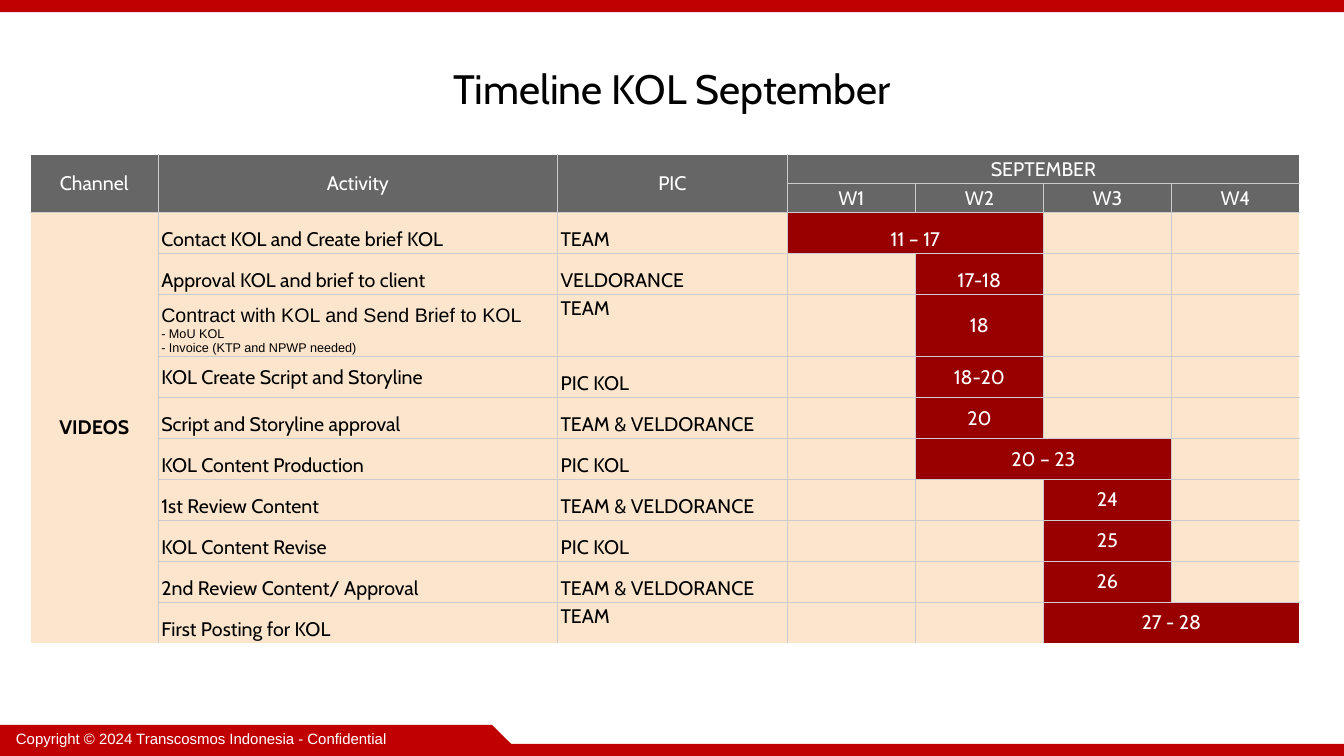
from lxml import etree
from pptx import Presentation
from pptx import util as u
from pptx.dml.color import RGBColor
from pptx.enum import shapes, text
from pptx.oxml.ns import qn

RED = RGBColor(0xC0, 0x00, 0x00)
DARK = RGBColor(0x98, 0x00, 0x00)
GREY = RGBColor(0x66, 0x66, 0x66)
LINE = RGBColor(0xCC, 0xCC, 0xCC)
CREAM = RGBColor(0xFC, 0xE5, 0xCD)
WHITE = RGBColor(0xFF, 0xFF, 0xFF)
BLACK = RGBColor(0x00, 0x00, 0x00)

LEFT, MID = text.PP_ALIGN.LEFT, text.PP_ALIGN.CENTER
TOP, HALF, LOW = (text.MSO_ANCHOR.TOP, text.MSO_ANCHOR.MIDDLE,
                  text.MSO_ANCHOR.BOTTOM)

deck = Presentation()
deck.slide_width, deck.slide_height = u.Inches(13.33), u.Inches(7.5)
slide = deck.slides.add_slide(deck.slide_layouts[6])


def style(para, size, color, align=LEFT, face="Cabin", bold=False):
    para.alignment = align
    font = para.font
    font.size, font.name, font.bold = u.Pt(size), face, bold
    font.color.rgb = color


def put(row, col, words, color, align=LEFT, anchor=LOW, bold=False):
    """Write words into one table cell."""
    cell = table.cell(row, col)
    cell.text = words
    cell.vertical_anchor = anchor
    for para in cell.text_frame.paragraphs:
        style(para, 14, color, align, bold=bold)


# Red bars and footer tab
KIND = shapes.MSO_SHAPE
BAR = 0.12
for kind, top, wide, high in [
    (KIND.RECTANGLE, 7.5 - BAR, 13.33, BAR),
    (KIND.SNIP_1_RECTANGLE, 7.19, 5.07, 0.38),
    (KIND.RECTANGLE, 0, 13.33, BAR),
]:
    bar = slide.shapes.add_shape(
        kind, 0, u.Inches(top), u.Inches(wide), u.Inches(high))
    bar.shadow.inherit = False
    bar.fill.solid()
    bar.fill.fore_color.rgb = RED
    bar.line.fill.background()
    if kind == KIND.SNIP_1_RECTANGLE:
        bar.adjustments[0] = 0.5

# Title and copyright line
for words, place, size, color, align, face in [
    ("Timeline KOL September", (1.74, 0.61, 9.85, 0.51),
     29.3, BLACK, MID, "Cabin"),
    ("Copyright © 2024 Transcosmos Indonesia - Confidential",
     (0.06, 7.19, 4.01, 0.28), 10.7, WHITE, LEFT, "Arial"),
]:
    frame = slide.shapes.add_textbox(*map(u.Inches, place)).text_frame
    frame.word_wrap = True
    frame.text = words
    style(frame.paragraphs[0], size, color, align, face)
    if align == MID:
        frame.margin_left = frame.margin_right = frame.margin_bottom = 0
        frame.margin_top = u.Inches(0.02)

# Each task: activity, its anchor, person, anchor, first week, weeks, dates, anchor
TEAM, BOTH, KOL = "TEAM", "TEAM & VELDORANCE", "PIC KOL"
CONTRACT = ("Contract with KOL and Send Brief to KOL\n"
            "- MoU KOL\n- Invoice (KTP and NPWP needed)")
tasks = [
    ("Contact KOL and Create brief KOL", LOW, TEAM, LOW, 1, 2, "11 – 17", LOW),
    ("Approval KOL and brief to client", LOW, "VELDORANCE", LOW,
     2, 1, "17-18", LOW),
    (CONTRACT, LOW, TEAM, TOP, 2, 1, "18", HALF),
    ("KOL Create Script and Storyline", HALF, KOL, LOW, 2, 1, "18-20", HALF),
    ("Script and Storyline approval", LOW, BOTH, LOW, 2, 1, "20", HALF),
    ("KOL Content Production", LOW, KOL, LOW, 2, 2, "20 – 23", HALF),
    ("1st Review Content", LOW, BOTH, LOW, 3, 1, "24", HALF),
    ("KOL Content Revise", LOW, KOL, LOW, 3, 1, "25", HALF),
    ("2nd Review Content/ Approval", LOW, BOTH, LOW, 3, 1, "26", HALF),
    ("First Posting for KOL", LOW, TEAM, TOP, 3, 2, "27 - 28", HALF),
]

HEAD, TALL, FULL = 0.29, 0.62, 4.85
EVEN = (FULL - 2 * HEAD - TALL) / (len(tasks) - 1)
highs = [HEAD] * 2 + [TALL if task[0] == CONTRACT else EVEN for task in tasks]
wides = [1.27, 3.96, 2.28] + [1.27] * 4
ROWS, COLS = len(highs), len(wides)

table = slide.shapes.add_table(
    ROWS, COLS, u.Inches(0.3), u.Inches(1.53),
    u.Inches(sum(wides)), u.Inches(FULL)).table
table.first_row = table.horz_banding = False
for row, high in zip(table.rows, highs):
    row.height = u.Inches(high)
for col, wide in zip(table.columns, wides):
    col.width = u.Inches(wide)

# Header
for col, name in enumerate(["Channel", "Activity", "PIC"]):
    table.cell(0, col).merge(table.cell(1, col))
    put(0, col, name, WHITE, MID, HALF)
table.cell(0, 3).merge(table.cell(0, COLS - 1))
put(0, 3, "SEPTEMBER", WHITE, MID)
for week in range(1, 5):
    put(1, 2 + week, f"W{week}", WHITE, MID)

# Channel and tasks
table.cell(2, 0).merge(table.cell(ROWS - 1, 0))
put(2, 0, "VIDEOS", BLACK, MID, HALF, True)
busy = set()
for row, task in enumerate(tasks, 2):
    name, sit, who, stand, week, span, dates, rest = task
    put(row, 1, name, BLACK, anchor=sit)
    put(row, 2, who, BLACK, anchor=stand)
    first, last = 2 + week, 1 + week + span
    if span > 1:
        table.cell(row, first).merge(table.cell(row, last))
    put(row, first, dates, WHITE, MID, rest)
    busy.update((row, col) for col in range(first, last + 1))
    if name == CONTRACT:
        paras = table.cell(row, 1).text_frame.paragraphs
        for para, size in zip(paras, [14, 9, 9]):
            style(para, size, BLACK, face="Arial")

# Margins, borders and fills; the table's outer edge is white
for row in range(ROWS):
    for col in range(COLS):
        cell = table.cell(row, col)
        cell.margin_left = cell.margin_right = u.Inches(0.03)
        cell.margin_top = cell.margin_bottom = u.Inches(0.02)
        props = cell._tc.get_or_add_tcPr()
        for side, outer in [("L", col == 0),
                            ("R", col + cell.span_width == COLS),
                            ("T", row == 0),
                            ("B", row + cell.span_height == ROWS)]:
            edge = etree.SubElement(props, qn(f"a:ln{side}"), w=str(u.Pt(0.75)))
            paint = etree.SubElement(edge, qn("a:solidFill"))
            etree.SubElement(paint, qn("a:srgbClr"),
                             val=str(WHITE if outer else LINE))
        cell.fill.solid()
        cell.fill.fore_color.rgb = (
            GREY if row < 2 else DARK if (row, col) in busy else CREAM)

deck.save("out.pptx")
